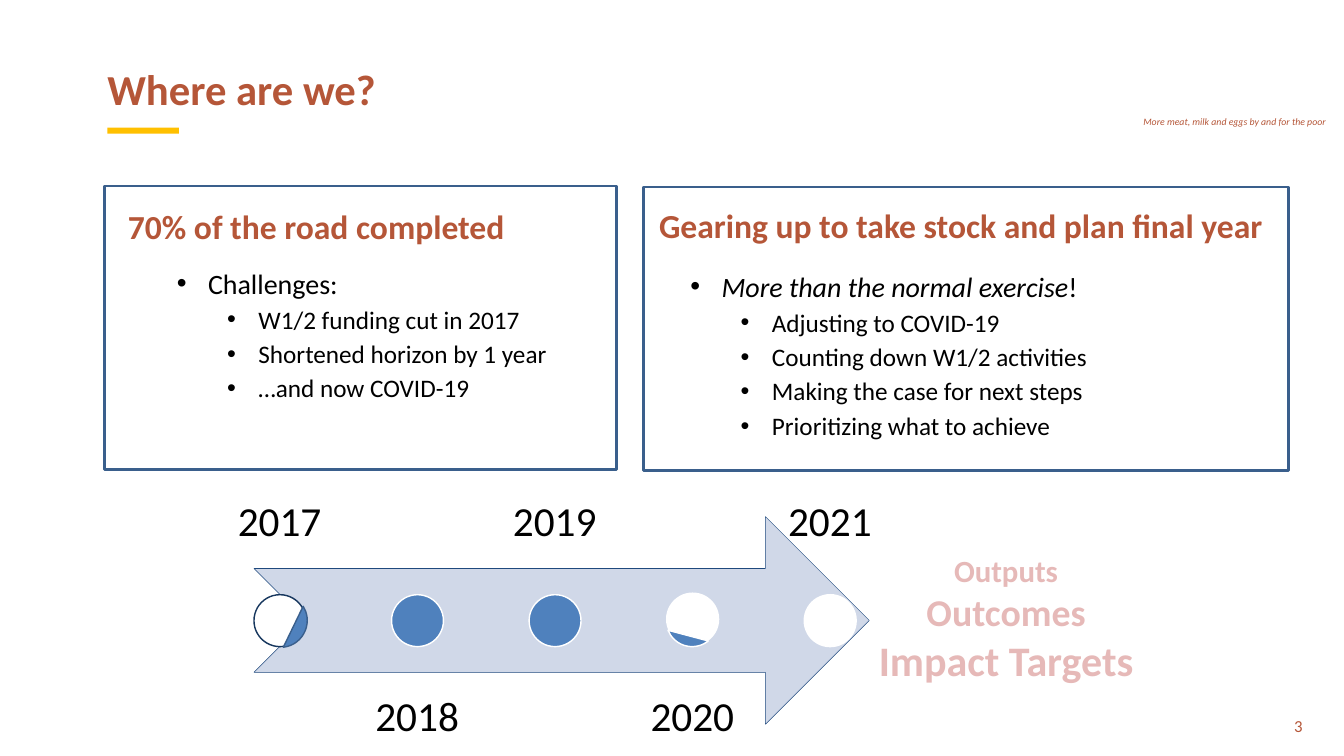
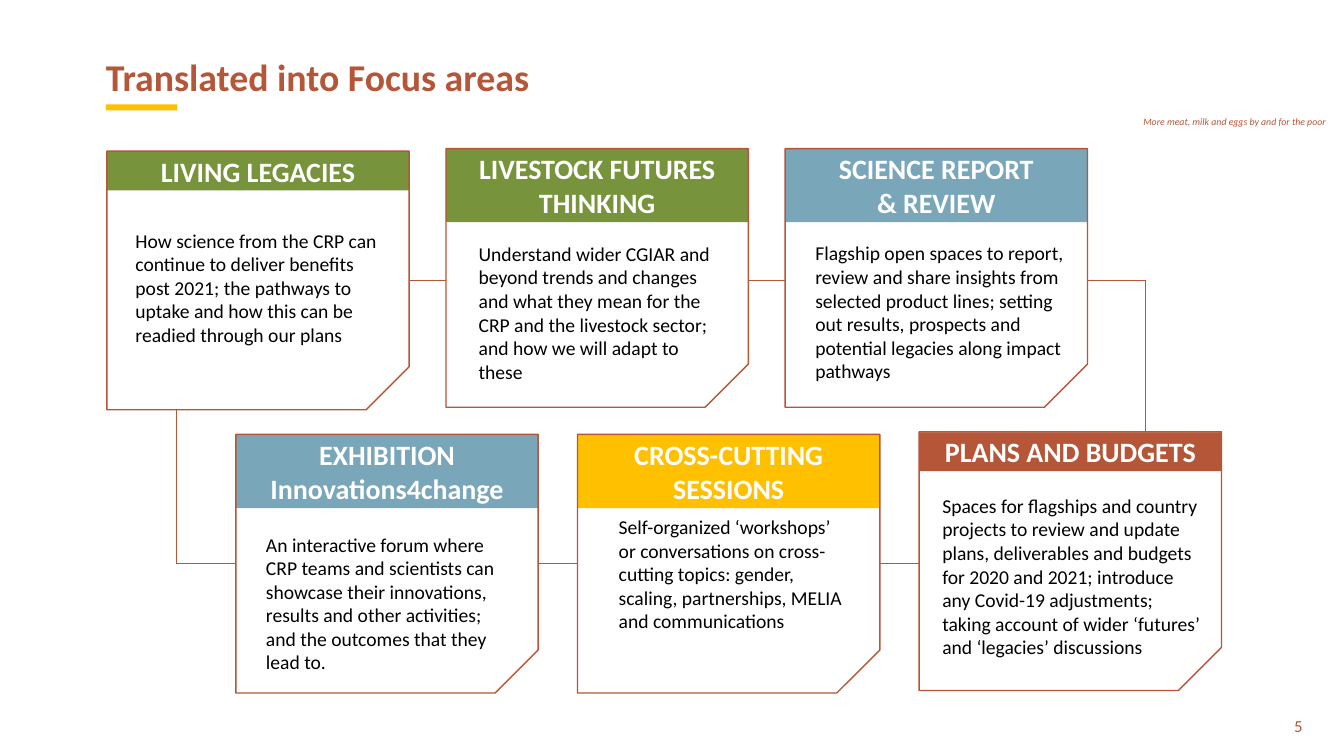
from pptx import Presentation
from pptx.dml.color import RGBColor
from pptx.enum.shapes import MSO_CONNECTOR, MSO_SHAPE
from pptx.enum.text import MSO_ANCHOR, MSO_AUTO_SIZE, PP_ALIGN
from pptx.oxml.ns import qn
from pptx.oxml.xmlchemy import OxmlElement
from pptx.util import Inches, Pt

LEFT, MID, RIGHT = PP_ALIGN.LEFT, PP_ALIGN.CENTER, PP_ALIGN.RIGHT
TOP, CENTER, BASE = MSO_ANCHOR.TOP, MSO_ANCHOR.MIDDLE, MSO_ANCHOR.BOTTOM
RECT, OVAL, CHORD = MSO_SHAPE.RECTANGLE, MSO_SHAPE.OVAL, MSO_SHAPE.CHORD
ARROW, SNIP = MSO_SHAPE.NOTCHED_RIGHT_ARROW, MSO_SHAPE.SNIP_1_RECTANGLE
STRAIGHT = MSO_CONNECTOR.STRAIGHT
FIXED = MSO_AUTO_SIZE.NONE

COLS, ROWS = 26.67, 15
FONT = "Calibri"
RUST, GOLD, GREEN, STEEL = "B55638", "FFC000", "77933C", "7AA6BA"
BLUE, NAVY, FRAME, PALE = "4F81BD", "17375E", "3A5F8C", "D0D8E8"
INK, EDGE, ROSE, WHITE = "000000", "1F497D", "E6B9B8", "FFFFFF"

CARD_W, CARD_H = 6, 5.13
TOP_X, TOP_STEP, TOP_LINK = 2.12, 6.73, 5.56
LOW_X, LOW_STEP, LOW_LINK = 4.68, 6.78, 11.17

TOP_CARDS = [
    (3, GREEN, ["LIVING LEGACIES"], (0.47, 1.49, 5.1, 2.93),
     "How science from the CRP can continue to deliver benefits post 2021; "
     "the pathways to uptake and how this can be readied through our plans"),
    (2.95, GREEN, ["LIVESTOCK FUTURES", "THINKING"], (0.55, 1.8, 5.02, 2.93),
     "Understand wider CGIAR and beyond trends and changes and what they mean "
     "for the CRP and the livestock sector; and how we will adapt to these"),
    (2.95, STEEL, ["SCIENCE REPORT", "& REVIEW"], (0.5, 1.79, 5.43, 2.93),
     "Flagship open spaces to report, review and share insights from selected "
     "product lines; setting out results, prospects and potential legacies "
     "along impact pathways"),
]
LOW_CARDS = [
    (8.62, STEEL, ["EXHIBITION", "Innovations4change"], (0.5, 1.9, 4.99, 3.4),
     "An interactive forum where CRP teams and scientists can showcase their "
     "innovations, results and other activities; and the outcomes that they "
     "lead to."),
    (8.62, GOLD, ["CROSS-CUTTING", "SESSIONS"], (0.72, 1.55, 4.63, 2.93),
     "Self-organized ‘workshops’ or conversations on cross-cutting topics: "
     "gender, scaling, partnerships, MELIA and communications"),
    (8.57, RUST, ["PLANS AND BUDGETS"], (0.36, 1.18, 5.33, 3.87),
     "Spaces for flagships and country projects to review and update plans, "
     "deliverables and budgets for 2020 and 2021; introduce any Covid-19 "
     "adjustments; taking account of wider ‘futures’ and ‘legacies’ "
     "discussions"),
]


def grid(*cells):
    return [Inches(cell) for cell in cells]


def tint(hue):
    return RGBColor.from_string(hue)


def bullet(para, level):
    para.level = level
    props = para._p.get_or_add_pPr()
    props.set("marL", str(Inches(0.62 + level)))
    props.set("indent", str(Inches(-0.62)))
    face = OxmlElement("a:buFont")
    face.set("typeface", "Arial")
    mark = OxmlElement("a:buChar")
    mark.set("char", "•")
    props.append(face)
    props.append(mark)


def write(frame, paras, size=28, hue=INK, bold=False, italic=False,
          align=LEFT, anchor=TOP, wrap=True, lead=None, after=None,
          pad=(0.1, 0.05), levels=None):
    frame.auto_size = FIXED
    frame.word_wrap = wrap
    frame.vertical_anchor = anchor
    frame.margin_left = frame.margin_right = Inches(pad[0])
    frame.margin_top = frame.margin_bottom = Inches(pad[1])
    for i, runs in enumerate(paras):
        para = frame.add_paragraph() if i else frame.paragraphs[0]
        if levels:
            bullet(para, levels[i])
        para.alignment = align
        if lead:
            para.line_spacing = lead
        if after:
            para.space_after = Pt(after)
        for words, style in [(runs, {})] if isinstance(runs, str) else runs:
            run = para.add_run()
            run.text = words
            font = run.font
            font.name = FONT
            font.size = Pt(style.get("size", size))
            font.bold = bold
            font.italic = style.get("italic", italic)
            font.color.rgb = tint(hue)


def text(slide, box, *paras, **style):
    write(slide.shapes.add_textbox(*grid(*box)).text_frame, paras, **style)


def shape(slide, kind, box, fill=None, line=None, width=2, turn=0, arc=()):
    item = slide.shapes.add_shape(kind, *grid(*box))
    item.shadow.inherit = False
    item.rotation = turn
    for i, angle in enumerate(arc):
        item.adjustments[i] = angle * 0.6
    if fill:
        item.fill.solid()
        item.fill.fore_color.rgb = tint(fill)
    else:
        item.fill.background()
    if line:
        item.line.color.rgb = tint(line)
        item.line.width = Pt(width)
    else:
        item.line.fill.background()
    return item


def link(slide, *ends):
    line = slide.shapes.add_connector(STRAIGHT, *grid(*ends))
    line.line.color.rgb = tint(RUST)
    line.line.width = Pt(1)
    line._element.spPr.append(OxmlElement("a:effectLst"))


def start(deck, title, box, number, size, lead):
    slide = deck.slides.add_slide(deck.slide_layouts[5])
    head = slide.shapes.title
    head.left, head.top, head.width, head.height = grid(*box)
    write(head.text_frame, [title], size=size, hue=RUST, bold=True,
          anchor=CENTER, lead=lead)
    left, top, _, high = box
    shape(slide, RECT, (left + 0.1, top + high + 0.03 + lead * 0.1 - 0.08,
                        1.42, 0.12), GOLD)
    text(slide, (25.25, 14.16, 0.7, 0.5), str(number), size=24, hue=RUST,
         align=RIGHT)
    text(slide, (22.59, 2.25, 3.85, 0.34),
         "More meat, milk and eggs by and for the poor",
         size=14, hue=RUST, italic=True, wrap=False)
    return slide


def panel(slide, box, head, spot, body, place):
    shape(slide, RECT, box, line=FRAME, width=4)
    text(slide, spot, head, size=48, hue=RUST, bold=True, wrap=False)
    first, *rest = body
    text(slide, place, first, *[[(words, {"size": 36})] for words in rest],
         size=40, after=6, levels=[0] + [1] * len(rest))


def road(slide):
    shape(slide, ARROW, (5.04, 10.25, 12.21, 4.12), PALE, EDGE, 0.75)
    dots = [(WHITE, NAVY), (BLUE, WHITE), (BLUE, WHITE),
            (WHITE, WHITE), (WHITE, WHITE)]
    for i, (fill, line) in enumerate(dots):
        left = 5.04 + 2.73 * i
        low = i % 2
        text(slide, (left - 0.79, 13.34 if low else 7.17, 2.6, 4.12),
             str(2017 + i), size=59, align=MID, lead=0.9, wrap=False,
             anchor=TOP if low else BASE, pad=(0.3, 0.46))
        shape(slide, OVAL, (left, 11.77 if i == 3 else 11.8, 1.03, 1.03),
              fill, line)
    shape(slide, CHORD, (13.22, 11.8, 1.03, 1.03), BLUE, WHITE, turn=356.3,
          arc=(55.12, 162))
    shape(slide, CHORD, (5.06, 11.81, 1.05, 1.02), BLUE, FRAME, turn=292.3,
          arc=(33.71, 153.48))


def card(slide, left, top, hue, head, place, body):
    high = 0.77 if len(head) == 1 else 1.45
    band = shape(slide, RECT, (left, top + 0.01, CARD_W, high), hue)
    write(band.text_frame, head, size=40, hue=WHITE, bold=True, align=MID)
    dx, dy, wide, tall = place
    text(slide, (left + dx, top + dy, wide, tall), body)
    edge = shape(slide, SNIP, (left, top, CARD_W, CARD_H), line=RUST,
                 turn=180)
    edge._element.spPr.find(qn("a:xfrm")).set("flipH", "1")


def row(slide, cards, left, step, level):
    for i, (top, *parts) in enumerate(cards):
        x = left + step * i
        card(slide, x, top, *parts)
        if i:
            link(slide, x - step + CARD_W, level, x, level)


def status(deck):
    slide = start(deck, "Where are we?", (2.03, 1.37, 11.48, 0.97), 3, 61, 0.8)
    slide.shapes[1].top = Inches(2.53)
    road(slide)
    panel(slide, (2.07, 3.69, 10.17, 5.63),
          "70% of the road completed", (2.44, 4.04, 7.75, 0.91),
          ["Challenges:", "W1/2 funding cut in 2017",
           "Shortened horizon by 1 year", "…and now COVID-19"],
          (3.41, 5.23, 8.57, 2.84))
    panel(slide, (12.77, 3.71, 12.8, 5.63),
          "Gearing up to take stock and plan final year",
          (12.98, 4.02, 12.31, 0.91),
          [[("More than the normal exercise", {"italic": True}), ("!", {})],
           "Adjusting to COVID-19", "Counting down W1/2 activities",
           "Making the case for next steps", "Prioritizing what to achieve"],
          (13.6, 5.29, 8.57, 3.53))
    text(slide, (17.31, 10.9, 5.31, 2.83), [("Outputs", {"size": 44})],
         [("Outcomes", {"size": 54})], "Impact Targets", size=60, hue=ROSE,
         bold=True, align=MID, wrap=False)


def focus(deck):
    slide = start(deck, "Translated into Focus areas",
                  (2, 1.08, 12.86, 0.97), 5, 54, 0.9)
    slide.shapes[1].top = Inches(2.07)
    row(slide, TOP_CARDS, TOP_X, TOP_STEP, TOP_LINK)
    row(slide, LOW_CARDS, LOW_X, LOW_STEP, LOW_LINK)
    link(slide, 3.5, TOP_CARDS[0][0] + CARD_H, 3.5, LOW_LINK)
    link(slide, 3.5, LOW_LINK, LOW_X, LOW_LINK)
    link(slide, 22.73, LOW_CARDS[2][0], 22.73, TOP_LINK)
    link(slide, 22.73, TOP_LINK, TOP_X + 2 * TOP_STEP + CARD_W, TOP_LINK)


def main():
    deck = Presentation()
    deck.slide_width, deck.slide_height = grid(COLS, ROWS)
    status(deck)
    focus(deck)
    deck.save("out.pptx")


if __name__ == "__main__":
    main()
